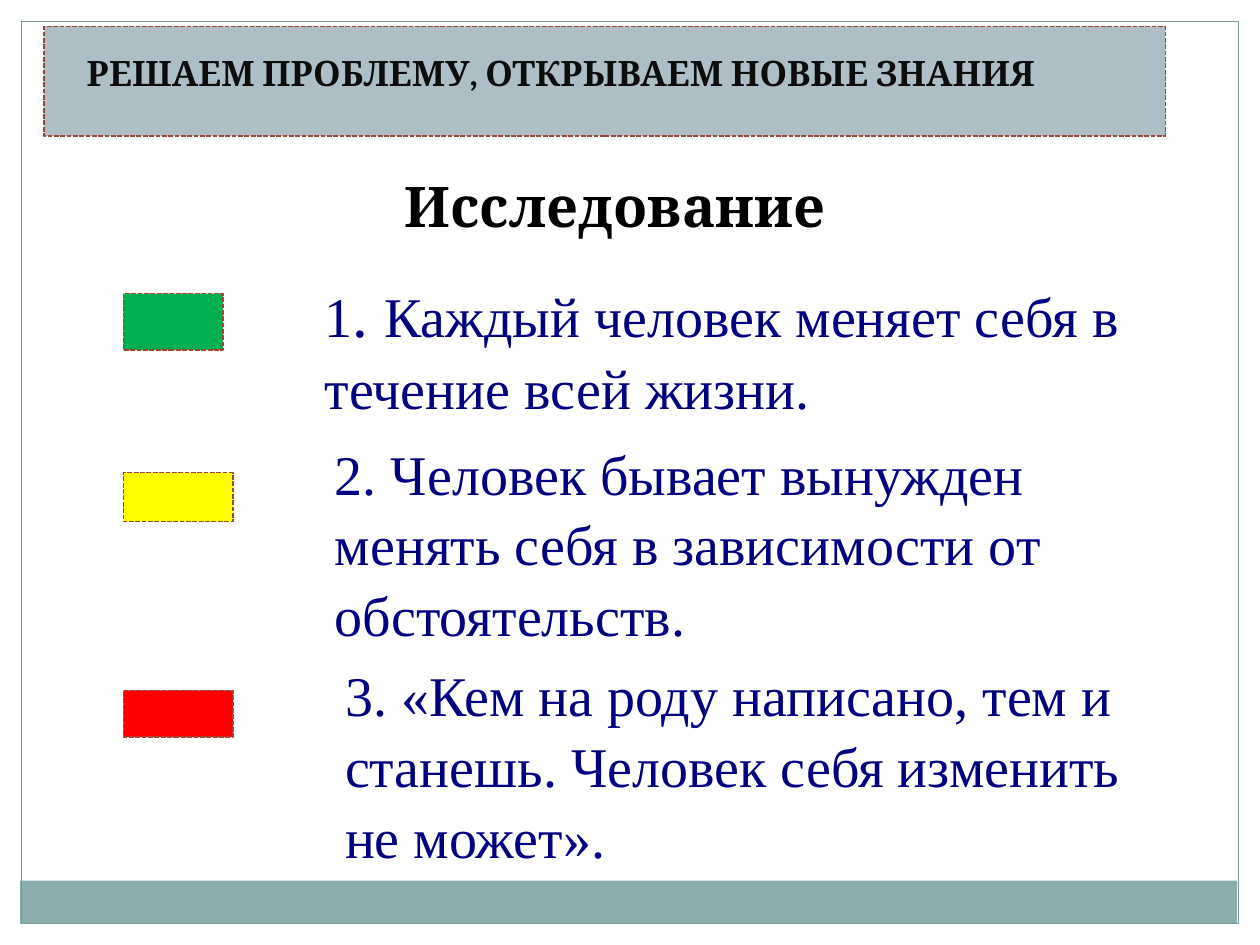
from pptx import Presentation
from pptx.dml.color import RGBColor
from pptx.enum import dml, shapes
from pptx.util import Inches, Pt

WHITE = RGBColor(0xFF, 0xFF, 0xFF)
TEAL = RGBColor(0x8C, 0xAD, 0xAE)
FRAME = RGBColor(0x7C, 0x99, 0x9A)
BANNER = RGBColor(0xAD, 0xBE, 0xC6)
RUST = RGBColor(0x9B, 0x49, 0x36)
NEAR_BLACK = RGBColor(0x0D, 0x0D, 0x0D)
BLACK = RGBColor(0, 0, 0)
NAVY = RGBColor(0, 0, 0x80)
GREEN = RGBColor(0, 0xB0, 0x50)
YELLOW = RGBColor(0xFF, 0xFF, 0)
RED = RGBColor(0xFF, 0, 0)

prs = Presentation()
prs.slide_width, prs.slide_height = Inches(10), Inches(7.5)
slide = prs.slides.add_slide(prs.slide_layouts[6])


def add_box(place, fill=None, line=None, width=0.9, dashed=False):
    box = slide.shapes.add_shape(shapes.MSO_SHAPE.RECTANGLE, *map(Inches, place))
    box.shadow.inherit = False
    if fill is None:
        box.fill.background()
    else:
        box.fill.solid()
        box.fill.fore_color.rgb = fill
    if line is None:
        box.line.fill.background()
    else:
        box.line.color.rgb = line
        box.line.width = Pt(width)
    if dashed:
        box.line.dash_style = dml.MSO_LINE.SQUARE_DOT


def add_text(place, pieces, font, color, bold=False, spacing=None):
    frame = slide.shapes.add_textbox(*map(Inches, place)).text_frame
    frame.word_wrap = True
    paragraph = frame.paragraphs[0]
    paragraph.line_spacing = spacing
    for words, size in pieces:
        run = paragraph.add_run()
        run.text = words
        run.font.name = font
        run.font.size = Pt(size)
        run.font.bold = bold
        run.font.color.rgb = color


# Page margins, bottom band and frame
for margin in [(0, 0, 10, 0.17), (9.83, 0, 0.17, 7.5), (0, 0, 0.17, 7.5)]:
    add_box(margin, WHITE)
add_box((0.16, 6.99, 9.66, 0.34), TEAL)
add_box((0.17, 0.17, 9.66, 7.16), line=FRAME, width=0.75)

# Banner and heading
add_box((0.35, 0.21, 8.9, 0.87), BANNER, RUST, dashed=True)
add_text((0.59, 0.36, 9.06, 0.44), [("РЕШАЕМ ПРОБЛЕМУ, ОТКРЫВАЕМ НОВЫЕ ЗНАНИЯ", 20)],
         "Cambria", NEAR_BLACK, bold=True)
add_text((3.11, 1.31, 4.25, 0.63), [("Исследование", 32)], "Cambria", BLACK, bold=True)

# Statements, each with its colour card
statements = [
    ((2.48, 2.1, 7.4, 1.23),
     [("1", 32), (". ", 36), ("Каждый человек меняет себя в течение всей жизни.", 32)],
     (0.98, 2.33, 0.79, 0.45), GREEN),
    ((2.56, 3.41, 6.54, 1.72),
     [("2. Человек бывает вынужден менять себя в зависимости от обстоятельств.", 32)],
     (0.98, 3.75, 0.87, 0.39), YELLOW),
    ((2.64, 5.17, 6.54, 1.72),
     [("3. «Кем на роду написано, тем и станешь. Человек себя изменить не может».", 32)],
     (0.98, 5.48, 0.87, 0.37), RED),
]
for text_place, pieces, card_place, card_color in statements:
    add_text(text_place, pieces, "Times New Roman", NAVY, spacing=1.05)
    add_box(card_place, card_color, RUST, dashed=True)

prs.save("out.pptx")
